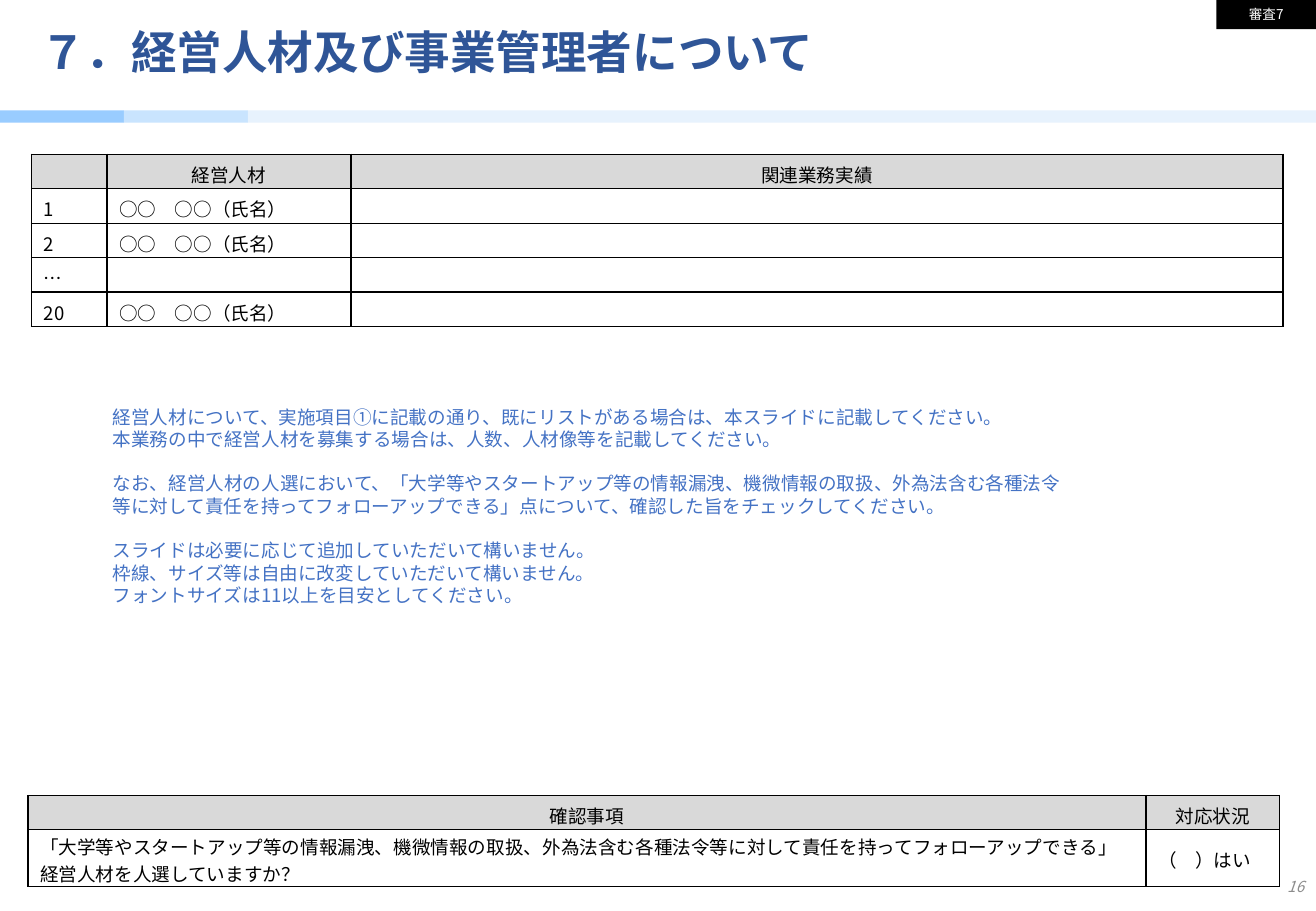
from lxml.etree import SubElement as Sub
from pptx import Presentation
from pptx.dml.color import RGBColor as Rgb
from pptx.enum.shapes import MSO_SHAPE as Shape
from pptx.enum.text import MSO_ANCHOR as Anchor, PP_ALIGN as Align
from pptx.oxml.ns import qn
from pptx.util import Inches as In, Pt

W, H = 10.83, 7.5
FONT = "Noto Sans CJK JP"
HUE = dict(title="2F5597", note="4472C4", ink="000000", white="FFFFFF",
           head="D9D9D9", page="8C8C8C", bar1="99CCFF", bar2="C9E4FE",
           bar3="E7F2FD")
NAME = "○○　○○（氏名）"
STAFF = [["", "経営人材", "関連業務実績"],
         ["1", NAME, ""], ["2", NAME, ""], ["…", "", ""], ["20", NAME, ""]]
CHECK = [["確認事項", "対応状況"],
         ["「大学等やスタートアップ等の情報漏洩、機微情報の取扱、外為法含む各種法令等に対して"
          "責任を持ってフォローアップできる」経営人材を人選していますか？", "（　）はい"]]
NOTES = [
    ["経営人材について、実施項目①に記載の通り、既にリストがある場合は、本スライドに記載してください。",
     "本業務の中で経営人材を募集する場合は、人数、人材像等を記載してください。"],
    ["なお、経営人材の人選において、「大学等やスタートアップ等の情報漏洩、機微情報の取扱、"
     "外為法含む各種法令等に対して責任を持ってフォローアップできる」点について、"
     "確認した旨をチェックしてください。"],
    ["スライドは必要に応じて追加していただいて構いません。",
     "枠線、サイズ等は自由に改変していただいて構いません。",
     "フォントサイズは11以上を目安としてください。"]]


def color(key):
    return Rgb.from_string(HUE[key])


def style(para, size, hue, align=Align.LEFT, bold=False, slant=False):
    para.alignment = align
    for run in para.runs:
        font = run.font
        font.size, font.bold, font.italic = Pt(size), bold, slant
        font.color.rgb = color(hue)
        font.name = FONT
        Sub(font._element, qn("a:ea"), typeface=FONT)
    if not para.runs:
        Sub(para._p, qn("a:endParaRPr"), sz=str(size * 100))


def block(slide, box, hue):
    rect = slide.shapes.add_shape(Shape.RECTANGLE, *map(In, box))
    rect.shadow.inherit = False
    rect.fill.solid()
    rect.fill.fore_color.rgb = color(hue)
    rect.line.fill.background()
    return rect


def label(slide, box):
    frame = slide.shapes.add_textbox(*map(In, box)).text_frame
    frame.word_wrap = True
    return frame


def edge(cell):
    props = cell._tc.get_or_add_tcPr()
    for i, side in enumerate(("lnL", "lnR", "lnT", "lnB")):
        line = props.makeelement(qn("a:" + side), w=str(Pt(1)))
        fill = Sub(line, qn("a:solidFill"))
        Sub(fill, qn("a:srgbClr"), val=HUE["ink"])
        props.insert(i, line)


def grid(slide, box, cols, rows, data, pads):
    """Fill a bordered table; pads holds each row's top and bottom margin."""
    table = slide.shapes.add_table(len(rows), len(cols), *map(In, box)).table
    table.first_row = table.horz_banding = False
    for col, wide in zip(table.columns, cols):
        col.width = In(wide)
    for r, (row, high) in enumerate(zip(table.rows, rows)):
        row.height = In(high)
        for cell, text in zip(row.cells, data[r]):
            cell.text = text
            cell.vertical_anchor = Anchor.MIDDLE
            cell.margin_top, cell.margin_bottom = map(In, pads[r])
            if r == 0:
                cell.fill.solid()
                cell.fill.fore_color.rgb = color("head")
            else:
                cell.fill.background()
            edge(cell)
            style(cell.text_frame.paragraphs[0], 11, "ink",
                  Align.LEFT if r else Align.CENTER)


def header(slide, box):
    left, top, wide, high = box
    # Three-tone band
    step = 1.02
    stops = [left, left + step, left + 2 * step, left + wide]
    for i, hue in enumerate(("bar1", "bar2", "bar3")):
        block(slide, (stops[i], top + high - 0.1, stops[i + 1] - stops[i], 0.1), hue)
    # Title
    title = slide.shapes.title
    title.left, title.top, title.width, title.height = map(
        In, (left + 0.23, top + 0.07, 9.98, 0.76))
    frame = title.text_frame
    frame.text = "７．経営人材及び事業管理者について"
    frame.vertical_anchor = Anchor.MIDDLE
    para = frame.paragraphs[0]
    para.line_spacing = 0.9
    style(para, 27, "title", bold=True)
    # Review tag
    tag = block(slide, (left + wide - 0.82, top, 0.82, 0.24), "ink").text_frame
    tag.margin_top = tag.margin_bottom = 0
    tag.vertical_anchor = Anchor.MIDDLE
    tag.text = "審査7"
    style(tag.paragraphs[0], 8, "white", Align.CENTER)


def notes(slide, box):
    frame = label(slide, box)
    frame.text = "\n".join(line for part in NOTES for line in part)
    paras = iter(frame.paragraphs)
    for p, part in enumerate(NOTES):
        for i in range(len(part)):
            para = next(paras)
            para.line_spacing = Pt(13.2)
            if p and i == 0:
                para.space_before = Pt(13.2)
            style(para, 11, "note")


def footer(slide, box):
    frame = label(slide, box)
    frame.vertical_anchor = Anchor.MIDDLE
    frame.text = "16"
    style(frame.paragraphs[0], 9, "page", Align.RIGHT, slant=True)


def main():
    deck = Presentation()
    deck.slide_width, deck.slide_height = In(W), In(H)
    slide = deck.slides.add_slide(deck.slide_layouts[5])
    header(slide, (0, 0, W, 1.01))
    footer(slide, (W - 0.98, H - 0.4, 0.98, 0.4))
    pad = (0.05, 0.01)
    grid(slide, (0.26, 1.27, 10.3, 1.42), (0.62, 2.01, 7.67),
         [1.42 / 5] * 5, STAFF, [pad] * 5)
    grid(slide, (0.23, 6.55, 10.3, 0.75), (9.2, 1.1),
         (0.28, 0.47), CHECK, [pad, (0.02, 0)])
    notes(slide, (0.83, 3.29, 8.07, 1.77))
    deck.save("out.pptx")


if __name__ == "__main__":
    main()
